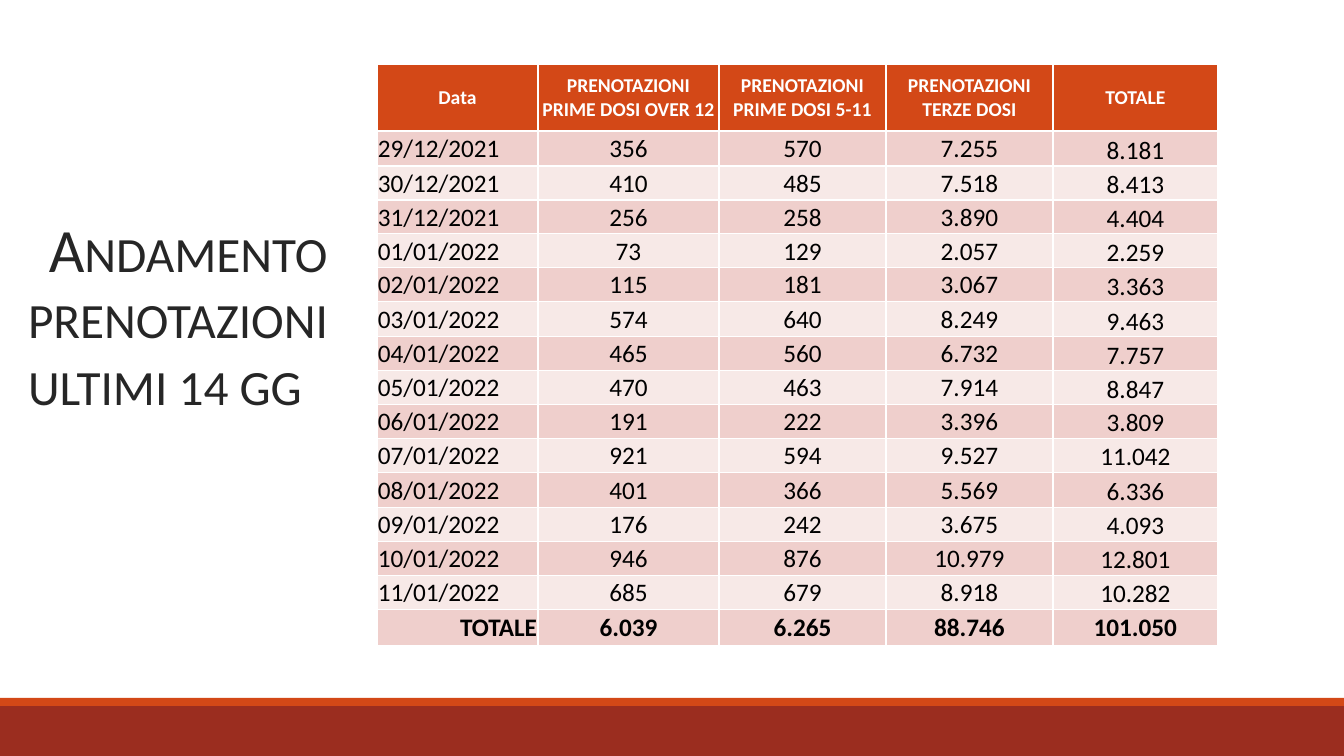
from lxml import etree
from pptx import Presentation
from pptx.dml.color import RGBColor
from pptx.enum.shapes import MSO_SHAPE
from pptx.enum.text import MSO_ANCHOR, PP_ALIGN
from pptx.oxml.ns import qn
from pptx.util import Emu, Pt

RECTANGLE = MSO_SHAPE.RECTANGLE
MIDDLE, BOTTOM = MSO_ANCHOR.MIDDLE, MSO_ANCHOR.BOTTOM
LEFT, CENTER, RIGHT = PP_ALIGN.LEFT, PP_ALIGN.CENTER, PP_ALIGN.RIGHT

WIDTH, HEIGHT = 1344, 756
SCALE = 12192000 / WIDTH
ORANGE, BRICK, WHITE = "D34817", "9B2D1F", "FFFFFF"
ROSE, PALE_ROSE = "EFCFCC", "F7E9E7"

HEADINGS = [
    "Data",
    "PRENOTAZIONI PRIME DOSI OVER 12",
    "PRENOTAZIONI PRIME DOSI 5-11",
    "PRENOTAZIONI TERZE DOSI",
    "TOTALE",
]
BOOKINGS = [
    ["29/12/2021", "356", "570", "7.255", "8.181"],
    ["30/12/2021", "410", "485", "7.518", "8.413"],
    ["31/12/2021", "256", "258", "3.890", "4.404"],
    ["01/01/2022", "73", "129", "2.057", "2.259"],
    ["02/01/2022", "115", "181", "3.067", "3.363"],
    ["03/01/2022", "574", "640", "8.249", "9.463"],
    ["04/01/2022", "465", "560", "6.732", "7.757"],
    ["05/01/2022", "470", "463", "7.914", "8.847"],
    ["06/01/2022", "191", "222", "3.396", "3.809"],
    ["07/01/2022", "921", "594", "9.527", "11.042"],
    ["08/01/2022", "401", "366", "5.569", "6.336"],
    ["09/01/2022", "176", "242", "3.675", "4.093"],
    ["10/01/2022", "946", "876", "10.979", "12.801"],
    ["11/01/2022", "685", "679", "8.918", "10.282"],
]
TOTALS = ["TOTALE", "6.039", "6.265", "88.746", "101.050"]
COLUMN_WIDTHS = [161, 181, 167, 167, 165]
ROW_HEIGHTS = [67] + [35 if day % 5 == 0 else 34 for day in range(len(BOOKINGS))] + [36]


def px(length):
    return Emu(round(length * SCALE))


def color(value):
    return RGBColor.from_string(value)


def write(frame, text, font="Calibri", size=18, ink="000000", bold=False, align=LEFT,
          small_caps=False):
    paragraph = frame.paragraphs[0]
    paragraph.alignment = align
    run = paragraph.add_run()
    run.text = text
    run.font.name = font
    run.font.size = Pt(size)
    run.font.bold = bold
    run.font.color.rgb = color(ink)
    if small_caps:
        run.font._element.set("cap", "small")
    return paragraph


class BookingSlide:
    def __init__(self, deck):
        self.slide = deck.slides.add_slide(deck.slide_layouts[6])

    def bar(self, top, height, fill):
        band = self.slide.shapes.add_shape(RECTANGLE, 0, px(top), px(WIDTH), px(height))
        band.shadow.inherit = False
        band.fill.solid()
        band.fill.fore_color.rgb = color(fill)
        band.line.fill.background()

    def title(self, text, left, top, width, height):
        frame = self.slide.shapes.add_textbox(px(left), px(top), px(width), px(height)).text_frame
        frame.word_wrap = True
        frame.margin_left = frame.margin_right = 0
        frame.margin_top = frame.margin_bottom = px(5)
        heading = write(frame, text, size=44, ink="262626", small_caps=True)
        heading.line_spacing = 0.9
        heading.space_before = Pt(12)
        heading.space_after = Pt(2)
        properties = heading._p.get_or_add_pPr()
        properties.set("marL", str(px(10)))
        properties.set("indent", str(-px(10)))
        bullet_color = etree.SubElement(properties, qn("a:buClr"))
        etree.SubElement(bullet_color, qn("a:srgbClr"), val=ORANGE)
        etree.SubElement(properties, qn("a:buChar"), char=" ")

    def border(self, cell, side, points):
        properties = cell._tc.get_or_add_tcPr()
        edge = etree.SubElement(properties, qn(f"a:ln{side}"), w=str(Pt(points)))
        fill = etree.SubElement(edge, qn("a:solidFill"))
        etree.SubElement(fill, qn("a:srgbClr"), val=WHITE)

    def cell(self, cell, text, fill, anchor=MIDDLE, thick="", **style):
        cell.margin_left = cell.margin_top = cell.margin_right = px(1)
        cell.margin_bottom = 0
        cell.vertical_anchor = anchor
        for side in "LRTB":
            self.border(cell, side, 1.5 if side == thick else 1)
        cell.fill.solid()
        cell.fill.fore_color.rgb = color(fill)
        write(cell.text_frame, text, **style)

    def table(self, left, top):
        grid = self.slide.shapes.add_table(
            len(ROW_HEIGHTS), len(COLUMN_WIDTHS), px(left), px(top),
            px(sum(COLUMN_WIDTHS)), px(sum(ROW_HEIGHTS))).table
        for column, width in zip(grid.columns, COLUMN_WIDTHS):
            column.width = px(width)
        for row, height in zip(grid.rows, ROW_HEIGHTS):
            row.height = px(height)
        for column, heading in enumerate(HEADINGS):
            self.cell(grid.cell(0, column), heading, ORANGE, thick="B",
                      size=14, ink=WHITE, bold=True, align=CENTER)
        last_column = len(HEADINGS) - 1
        for row, day in enumerate(BOOKINGS, 1):
            for column, value in enumerate(day):
                self.cell(grid.cell(row, column), value, ROSE if row % 2 else PALE_ROSE,
                          anchor=BOTTOM if column == last_column else MIDDLE,
                          thick="T" if row == 1 else "",
                          align=CENTER if column else LEFT)
        for column, total in enumerate(TOTALS):
            self.cell(grid.cell(len(BOOKINGS) + 1, column), total, ROSE,
                      bold=True, align=CENTER if column else RIGHT)


def main():
    deck = Presentation()
    deck.slide_width, deck.slide_height = px(WIDTH), px(HEIGHT)
    bookings = BookingSlide(deck)
    bookings.bar(706, 50, BRICK)
    bookings.bar(698, 8, ORANGE)
    bookings.title("Andamento prenotazioni ultimi 14 gg", 18, 214, 331, 398)
    bookings.table(377, 64)
    deck.save("out.pptx")


if __name__ == "__main__":
    main()
